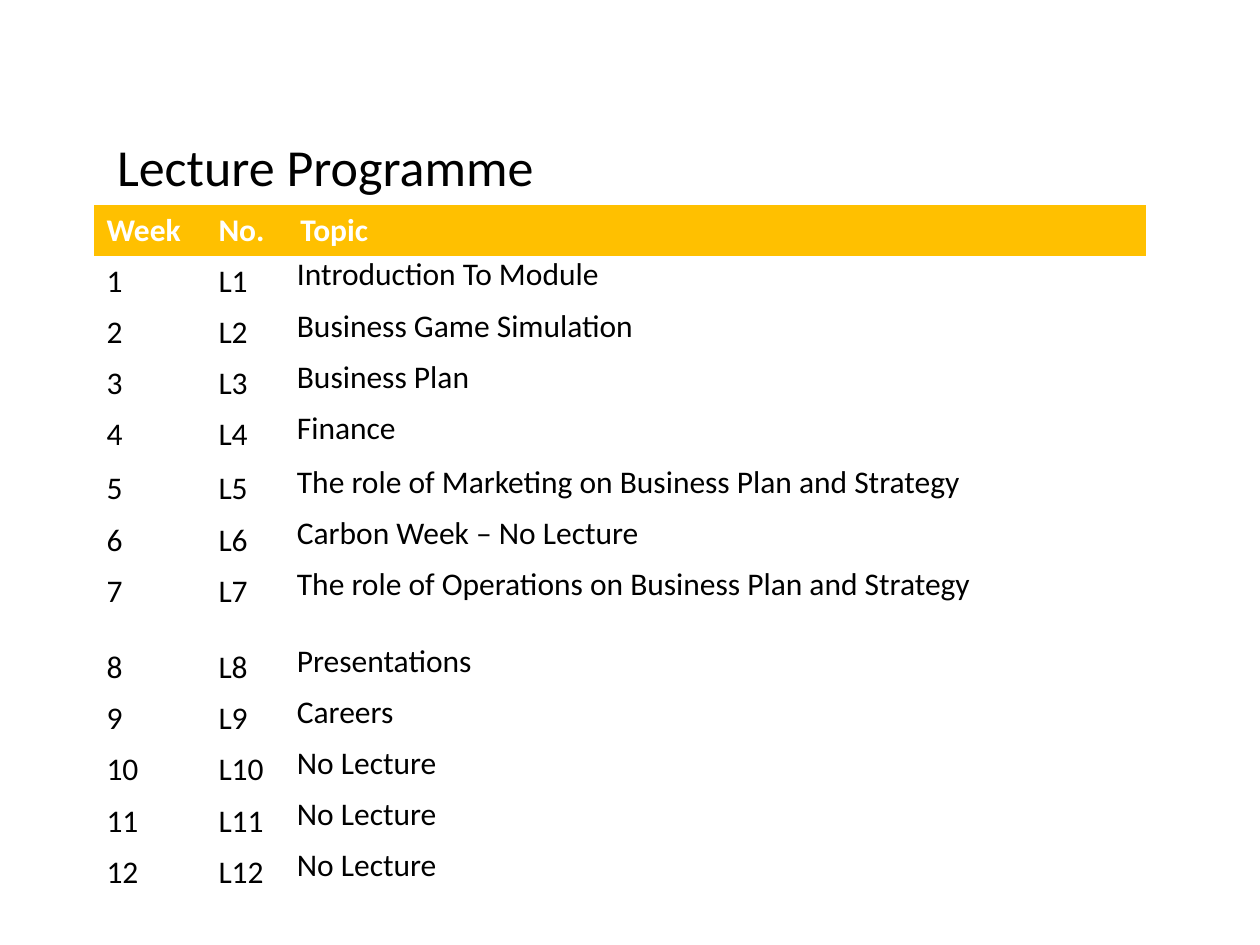
from pptx import Presentation
from pptx.dml.color import RGBColor
from pptx.enum.text import MSO_ANCHOR
from pptx.util import Pt

TITLE = "Lecture Programme"
HEADERS = ["Week", "No.", "Topic"]
TOPICS = [
    "Introduction To Module\u00a0".strip(),
    "Business Game Simulation",
    "Business Plan",
    "Finance",
    "The role of Marketing on Business Plan and Strategy",
    "Carbon Week – No Lecture",
    "The role of Operations on Business Plan and Strategy",
    "Presentations",
    "Careers",
    "No Lecture",
    "No Lecture",
    "No Lecture",
]
TOPICS[0] = "Introduction To Module"
THEME = {
    "font": "Calibri",
    "title": 29.7,
    "body": 18,
    "text": RGBColor(0, 0, 0),
    "header_text": RGBColor(255, 255, 255),
    "header_fill": RGBColor(255, 192, 0),
}
COL_WIDTHS = [64, 46.8, 490.4]
ROW_HEIGHT = 29.25
TALL_ROWS = {4: 31, 7: 43.7}


def style(p, size, color, bold=False):
    p.font.name = THEME["font"]
    p.font.size = Pt(size)
    p.font.color.rgb = color
    p.font.bold = bold


def add_title(s):
    tf = s.shapes.add_textbox(Pt(59.8), Pt(77), Pt(610.6), Pt(40.3)).text_frame
    tf.word_wrap = True
    tf.vertical_anchor = MSO_ANCHOR.MIDDLE
    p = tf.paragraphs[0]
    p.text = TITLE
    p.line_spacing = 0.9
    style(p, THEME["title"], THEME["text"])


def add_programme(s):
    rows = [HEADERS] + [[str(week), f"L{week}", topic]
                        for week, topic in enumerate(TOPICS, 1)]
    heights = [TALL_ROWS.get(i, ROW_HEIGHT) for i in range(len(rows))]
    frame = s.shapes.add_table(len(rows), len(HEADERS), Pt(53.7), Pt(117),
                               Pt(sum(COL_WIDTHS)), Pt(sum(heights)))
    table = frame.table
    table.horz_banding = False
    for column, width in zip(table.columns, COL_WIDTHS):
        column.width = Pt(width)
    for i, (values, height) in enumerate(zip(rows, heights)):
        table.rows[i].height = Pt(height)
        for j, value in enumerate(values):
            cell = table.cell(i, j)
            p = cell.text_frame.paragraphs[0]
            p.text = value
            if i == 0:
                cell.fill.solid()
                cell.fill.fore_color.rgb = THEME["header_fill"]
                style(p, THEME["body"], THEME["header_text"], True)
                continue
            cell.fill.background()
            style(p, THEME["body"], THEME["text"])
            if j == 2:
                cell.margin_left = cell.margin_right = Pt(5.2)
                cell.margin_top = cell.margin_bottom = 0
    table_style = frame._element.xpath(".//a:tableStyleId")[0]
    table_style.text = "{2D5ABB26-0587-4C30-8999-92F81FD0307C}"


prs = Presentation()
prs.slide_width, prs.slide_height = Pt(720), Pt(540)
s = prs.slides.add_slide(prs.slide_layouts[6])
add_title(s)
add_programme(s)
prs.save("out.pptx")
